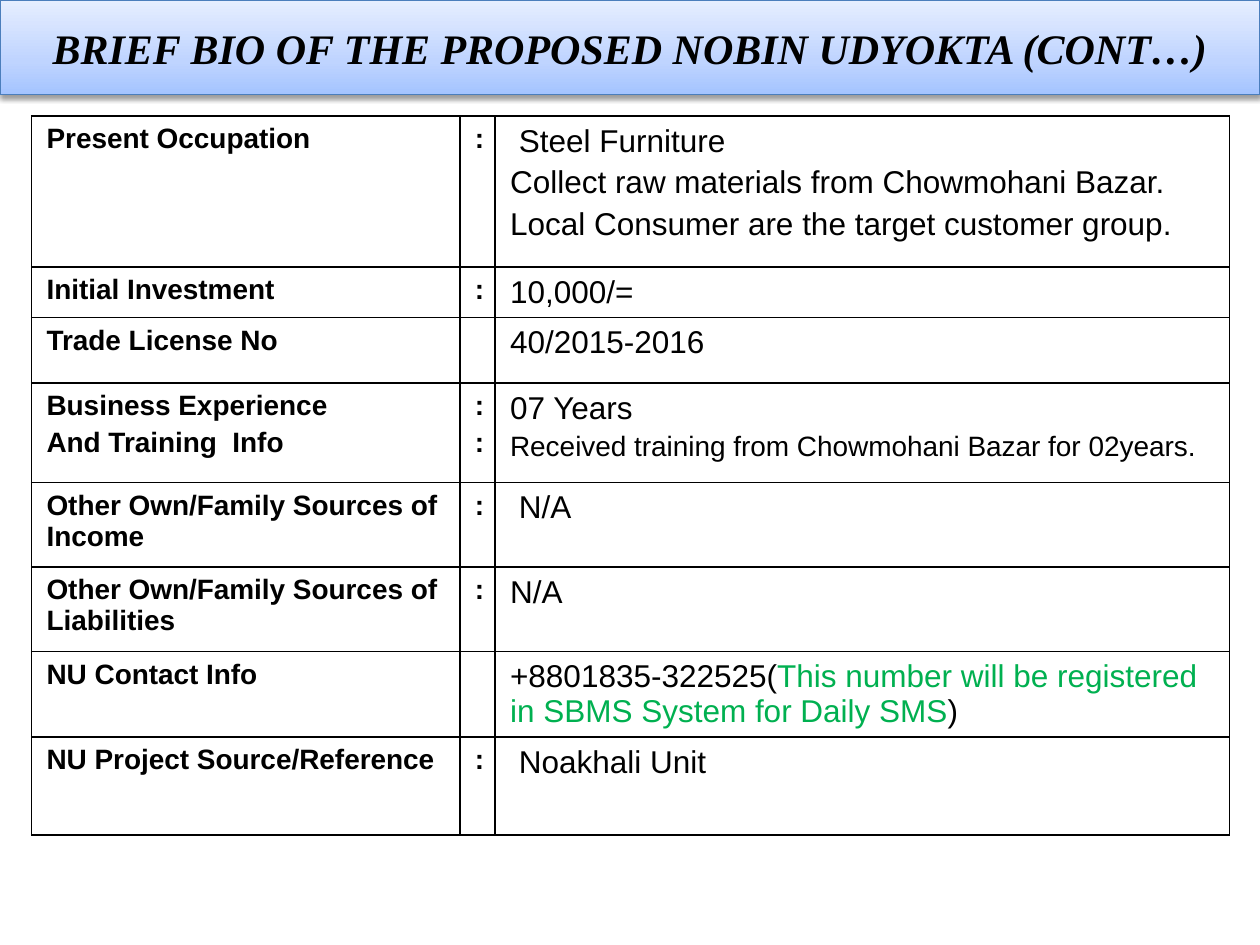
from lxml import etree
from pptx import Presentation
from pptx.dml.color import RGBColor
from pptx.enum.text import MSO_ANCHOR, MSO_AUTO_SIZE, PP_ALIGN
from pptx.oxml import parse_xml
from pptx.oxml.ns import nsdecls, qn
from pptx.util import Inches, Pt

MIDDLE = MSO_ANCHOR.MIDDLE
CENTER = PP_ALIGN.CENTER
NO_AUTOFIT = MSO_AUTO_SIZE.NONE

COLORS = {
    "text": "000000",
    "border": "000000",
    "note": "00B050",
    "title_line": "4B7EBC",
    "title_bottom": "A4C4FF",
    "title_middle": "BFD4FF",
    "title_top": "E6EEFF",
    "shadow": "000000",
}
TITLE = "BRIEF BIO OF THE PROPOSED NOBIN UDYOKTA (CONT…)"
TITLE_STOPS = [(0, "title_bottom"), (35, "title_middle"), (100, "title_top")]
LABEL_SIZE, VALUE_SIZE = 16, 18
COLUMN_WIDTHS = [3.4, 0.27, 5.83]

# Row height, labels, colons, values. A value is a list of (text, color) runs and a size.
ROWS = [
    (1.2, ["Present Occupation"], [":"], [
        ([(" Steel Furniture", "text")], VALUE_SIZE),
        ([("Collect raw materials from Chowmohani Bazar.", "text")], VALUE_SIZE),
        ([("Local Consumer are the target customer group.", "text")], VALUE_SIZE)]),
    (0.4, ["Initial Investment"], [":"], [([("10,000/=", "text")], VALUE_SIZE)]),
    (0.52, ["Trade License No"], [], [([("40/2015-2016", "text")], VALUE_SIZE)]),
    (0.79, ["Business Experience", "And Training  Info"], [":", ":"], [
        ([("07 Years", "text")], VALUE_SIZE),
        ([("Received training from Chowmohani Bazar for 02years.", "text")], LABEL_SIZE)]),
    (0.67, ["Other Own/Family Sources of Income"], [":"],
     [([(" N/A", "text")], VALUE_SIZE)]),
    (0.67, ["Other Own/Family Sources of Liabilities"], [":"],
     [([("N/A", "text")], VALUE_SIZE)]),
    (0.67, ["NU Contact Info"], [], [
        ([("+8801835-322525(", "text"),
          ("This number will be registered in SBMS System for Daily SMS", "note"),
          (")", "text")], VALUE_SIZE)]),
    (0.78, ["NU Project Source/Reference"], [":"],
     [([(" Noakhali Unit", "text")], VALUE_SIZE)]),
]


def color(name):
    return RGBColor.from_string(COLORS[name])


def format_font(font, name, size, color_name, bold, italic=False):
    font.name = name
    font.size = Pt(size)
    font.bold = bold
    font.italic = italic
    font.color.rgb = color(color_name)


def set_gradient(shape):
    shape.fill.gradient()
    shape.fill.gradient_angle = 90
    stops = shape.element.spPr.find(".//" + qn("a:gsLst"))
    for stop in list(stops):
        stops.remove(stop)
    for position, name in TITLE_STOPS:
        stop = etree.SubElement(stops, qn("a:gs"), pos=str(position * 1000))
        etree.SubElement(stop, qn("a:srgbClr"), val=COLORS[name])


def add_shadow(shape):
    shape.element.spPr.append(parse_xml(
        f'<a:effectLst {nsdecls("a")}>'
        f'<a:outerShdw blurRad="{Pt(3.1)}" dist="{Pt(1.6)}" dir="5400000" rotWithShape="0">'
        f'<a:srgbClr val="{COLORS["shadow"]}"><a:alpha val="38000"/></a:srgbClr>'
        '</a:outerShdw></a:effectLst>'))


def add_title(slide):
    title = slide.shapes.title
    title.left, title.top = Inches(0), Inches(0)
    title.width, title.height = Inches(10), Inches(0.75)
    title.line.color.rgb = color("title_line")
    title.line.width = Pt(0.75)
    set_gradient(title)
    add_shadow(title)
    text_frame = title.text_frame
    text_frame.text = TITLE
    text_frame.auto_size = NO_AUTOFIT
    text_frame.vertical_anchor = MIDDLE
    paragraph = text_frame.paragraphs[0]
    paragraph.alignment = CENTER
    format_font(paragraph.runs[0].font, "Times New Roman", 24, "text", True, True)


def style_cell(cell):
    cell.margin_left = cell.margin_right = Inches(0.12)
    cell.margin_top = cell.margin_bottom = Inches(0.06)
    properties = cell._tc.get_or_add_tcPr()
    for side in ("lnL", "lnR", "lnT", "lnB"):
        properties.append(parse_xml(
            f'<a:{side} {nsdecls("a")} w="{Pt(1)}"><a:solidFill>'
            f'<a:srgbClr val="{COLORS["border"]}"/></a:solidFill></a:{side}>'))
    cell.fill.background()


def fill_cell(cell, paragraphs, bold):
    style_cell(cell)
    text_frame = cell.text_frame
    for index, (runs, size) in enumerate(paragraphs):
        paragraph = text_frame.add_paragraph() if index else text_frame.paragraphs[0]
        if index:
            paragraph.space_before = Pt(0.2 * size)
        for text, color_name in runs:
            run = paragraph.add_run()
            run.text = text
            format_font(run.font, "Arial", size, color_name, bold)


def label_paragraphs(lines):
    return [([(line, "text")], LABEL_SIZE) for line in lines]


def add_bio_table(slide):
    total_height = sum(row[0] for row in ROWS)
    table = slide.shapes.add_table(
        len(ROWS), len(COLUMN_WIDTHS), Inches(0.25), Inches(0.92),
        Inches(sum(COLUMN_WIDTHS)), Inches(total_height)).table
    table.first_row = table.horz_banding = False
    for column, width in zip(table.columns, COLUMN_WIDTHS):
        column.width = Inches(width)
    for row, (height, labels, colons, values) in zip(table.rows, ROWS):
        row.height = Inches(height)
        label_cell, colon_cell, value_cell = row.cells
        fill_cell(label_cell, label_paragraphs(labels), True)
        fill_cell(colon_cell, label_paragraphs(colons), True)
        fill_cell(value_cell, values, False)


def main():
    presentation = Presentation()
    presentation.slide_width = Inches(10)
    presentation.slide_height = Inches(7.5)
    slide = presentation.slides.add_slide(presentation.slide_layouts[5])
    add_bio_table(slide)
    add_title(slide)
    presentation.save("out.pptx")


if __name__ == "__main__":
    main()
